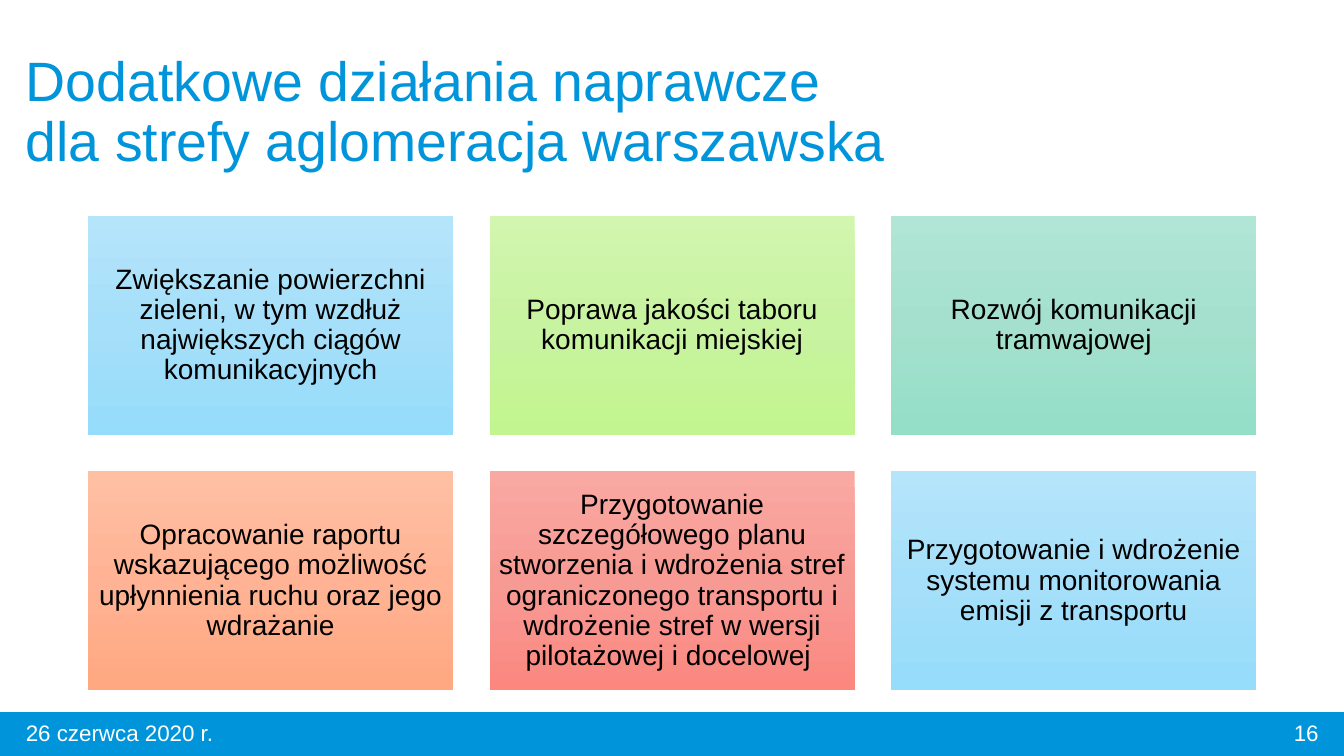
from copy import deepcopy

from pptx import Presentation
from pptx.dml.color import RGBColor
from pptx.enum.shapes import MSO_SHAPE
from pptx.enum.text import MSO_ANCHOR, PP_ALIGN
from pptx.oxml.ns import qn
from pptx.util import Cm, Pt

RECTANGLE = MSO_SHAPE.RECTANGLE
MIDDLE = MSO_ANCHOR.MIDDLE
LEFT, CENTER, RIGHT = PP_ALIGN.LEFT, PP_ALIGN.CENTER, PP_ALIGN.RIGHT

TITLE = "Dodatkowe działania naprawcze dla strefy aglomeracja warszawska"
DATE = "26 czerwca 2020 r."
PAGE_NUMBER = "16"
ACTIONS = [
    ("Zwiększanie powierzchni zieleni, w tym wzdłuż największych ciągów komunikacyjnych", "sky"),
    ("Poprawa jakości taboru komunikacji miejskiej", "lime"),
    ("Rozwój komunikacji tramwajowej", "mint"),
    ("Opracowanie raportu wskazującego możliwość upłynnienia ruchu oraz jego wdrażanie", "orange"),
    ("Przygotowanie szczegółowego planu stworzenia i wdrożenia stref ograniczonego "
     "transportu i wdrożenie stref w wersji pilotażowej i docelowej ", "red"),
    ("Przygotowanie i wdrożenie systemu monitorowania emisji z transportu", "sky"),
]
COLORS = {"blue": "0094DA", "white": "FFFFFF", "black": "000000"}
GRADIENTS = {
    "sky": ("B5E5FB", "A6DFF9", "95DDFB"),
    "lime": ("D2F5AF", "C8F3A0", "C2F58F"),
    "mint": ("B1E5D5", "A4E0CD", "93DFC7"),
    "orange": ("FFBFA3", "FFB394", "FFA881"),
    "red": ("FAA8A2", "F89A94", "FB877F"),
}
FONT = "Arial"
WIDTH, HEIGHT = 33.87, 19.05
FOOTER_TOP = 17.95
COLUMNS = 3
GRID_LEFT, GRID_TOP = 2.22, 5.44
CARD_WIDTH, CARD_HEIGHT, GAP = 9.2, 5.52, 0.92


def write(box, text, size, color, align=LEFT, spacing=1.0, side=0.25, top=0.13):
    frame = box.text_frame
    frame.word_wrap = True
    frame.vertical_anchor = MIDDLE
    frame.margin_left = frame.margin_right = Cm(side)
    frame.margin_top = frame.margin_bottom = Cm(top)
    para = frame.paragraphs[0]
    para.alignment = align
    para.line_spacing = spacing
    span = para.add_run()
    span.text = text
    span.font.name = FONT
    span.font.size = Pt(size)
    span.font.color.rgb = RGBColor.from_string(COLORS[color])


def add_label(page, left, top, width, height, text, **text_format):
    box = page.shapes.add_textbox(Cm(left), Cm(top), Cm(width), Cm(height))
    write(box, text, **text_format)


def add_rectangle(page, left, top, width, height):
    box = page.shapes.add_shape(RECTANGLE, Cm(left), Cm(top), Cm(width), Cm(height))
    box.shadow.inherit = False
    box.line.fill.background()
    return box


def fill_gradient(box, colors):
    box.fill.gradient()
    box.fill.gradient_angle = 270
    stop_list = box.fill.gradient_stops
    stops_xml = box._element.spPr.find(".//" + qn("a:gsLst"))
    stops_xml.insert(1, deepcopy(stops_xml[0]))
    stop_list = box.fill.gradient_stops
    for index, (stop, color) in enumerate(zip(stop_list, colors)):
        stop.position = index / (len(colors) - 1)
        stop.color.rgb = RGBColor.from_string(color)


def main():
    deck = Presentation()
    deck.slide_width, deck.slide_height = Cm(WIDTH), Cm(HEIGHT)
    page = deck.slides.add_slide(deck.slide_layouts[6])

    footer = add_rectangle(page, 0, FOOTER_TOP, WIDTH, HEIGHT - FOOTER_TOP)
    footer.fill.solid()
    footer.fill.fore_color.rgb = RGBColor.from_string(COLORS["blue"])
    footer.line.color.rgb = RGBColor.from_string(COLORS["blue"])
    footer.line.width = Pt(1)

    add_label(page, 0.4, 1.02, 22.76, 3.68, TITLE, size=39.6, color="blue", spacing=0.9)
    add_label(page, 0.4, FOOTER_TOP, 8.33, 1.02, DATE, size=16, color="white")

    for index, (text, gradient) in enumerate(ACTIONS):
        row, column = divmod(index, COLUMNS)
        left = GRID_LEFT + column * (CARD_WIDTH + GAP)
        top = GRID_TOP + row * (CARD_HEIGHT + GAP)
        card = add_rectangle(page, left, top, CARD_WIDTH, CARD_HEIGHT)
        fill_gradient(card, GRADIENTS[gradient])
        write(card, text, size=20, color="black", align=CENTER, spacing=0.9, side=0.2, top=0.2)

    add_label(page, 25.86, FOOTER_TOP, 7.62, 1.02, PAGE_NUMBER, size=16, color="white", align=RIGHT)
    deck.save("out.pptx")


if __name__ == "__main__":
    main()
